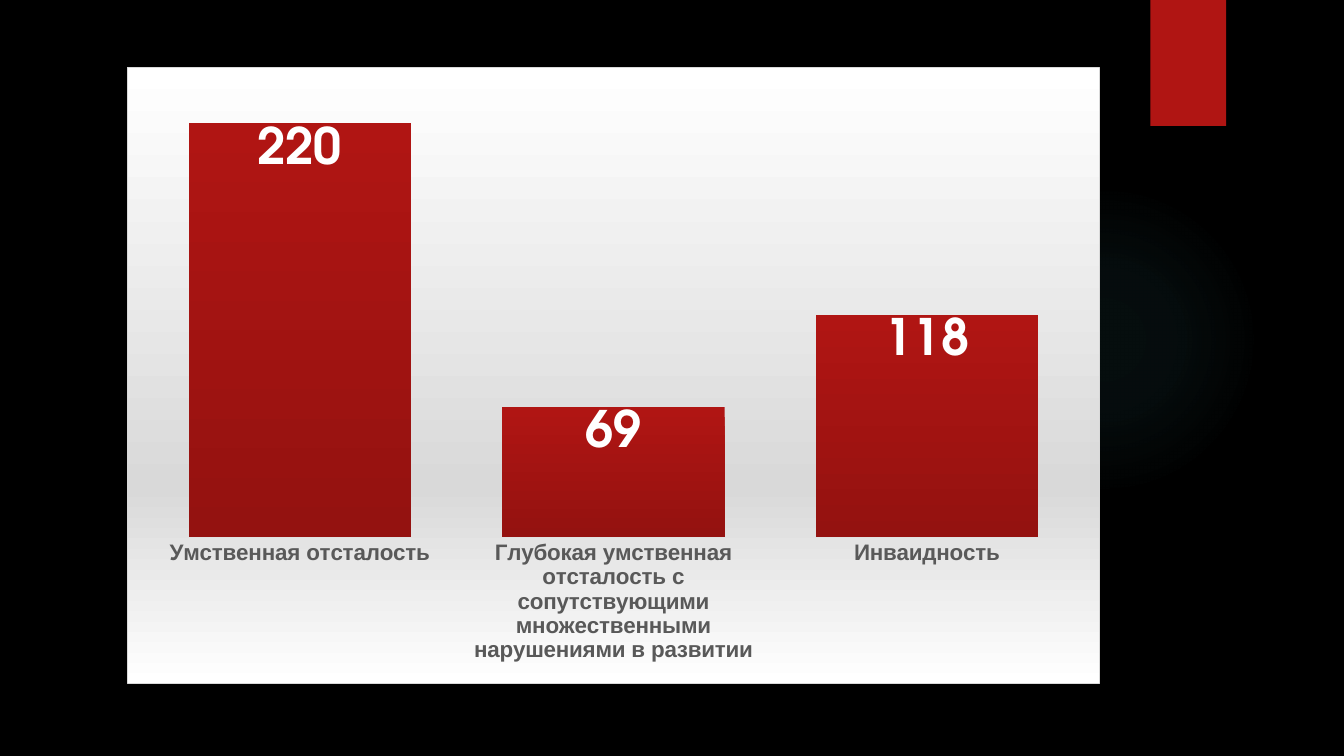
from pptx import Presentation
from pptx.chart.data import CategoryChartData
from pptx.dml.color import RGBColor
from pptx.enum.chart import XL_CHART_TYPE, XL_LABEL_POSITION, XL_TICK_MARK
from pptx.enum.shapes import MSO_SHAPE
from pptx.oxml import parse_xml
from pptx.oxml.ns import nsdecls, qn
from pptx.util import Inches, Pt

COLUMNS = XL_CHART_TYPE.COLUMN_CLUSTERED
INSIDE_END = XL_LABEL_POSITION.INSIDE_END
NO_TICK = XL_TICK_MARK.NONE
ELLIPSE = MSO_SHAPE.OVAL
RECTANGLE = MSO_SHAPE.RECTANGLE

COLORS = {
    "background": "000000",
    "glow": "50B9C1",
    "red": "B01513",
    "dark_red": "941210",
    "white": "FFFFFF",
    "silver": "D9D9D9",
    "label": "595959",
}
HEADING_FONT = "TeX Gyre Adventor"
LABEL_FONT = "Arial"

DOWNWARD = '<a:lin ang="5400000" scaled="0"/>'
FROM_CENTRE = ('<a:path path="circle"><a:fillToRect l="50000" t="50000" '
               'r="50000" b="50000"/></a:path>')

DIAGNOSES = {
    "Умственная отсталость": 220,
    "Глубокая умственная отсталость с сопутствующими множественными "
    "нарушениями в развитии": 69,
    "Инваидность": 118,
}


def rgb(color):
    return RGBColor.from_string(COLORS[color])


def gradient(stops, direction):
    """Return a gradient fill; each stop is (position %, colour, opacity %)."""
    marks = "".join(
        f'<a:gs pos="{position * 1000}"><a:srgbClr val="{COLORS[color]}">'
        f'<a:alpha val="{opacity * 1000}"/></a:srgbClr></a:gs>'
        for position, color, opacity in stops)
    return parse_xml(f'<a:gradFill {nsdecls("a")} rotWithShape="1">'
                     f'<a:gsLst>{marks}</a:gsLst>{direction}</a:gradFill>')


def format_text(text, size, color="white", font=HEADING_FONT, bold=False):
    """Format any chart text that has a font."""
    text.font.size = Pt(size)
    text.font.bold = bold
    text.font.name = font
    text.font.color.rgb = rgb(color)


class DiagnosisSlide:
    def __init__(self, presentation):
        self.width = presentation.slide_width
        self.height = presentation.slide_height
        self.slide = presentation.slides.add_slide(presentation.slide_layouts[6])
        self.slide.background.fill.solid()
        self.slide.background.fill.fore_color.rgb = rgb("background")

    def place(self, left, top, width, height):
        """Turn percentages of the slide into lengths."""
        return (round(self.width * left / 100), round(self.height * top / 100),
                round(self.width * width / 100), round(self.height * height / 100))

    def shape(self, kind, color, *box):
        shape = self.slide.shapes.add_shape(kind, *self.place(*box))
        shape.shadow.inherit = False
        shape.line.fill.background()
        shape.fill.solid()
        shape.fill.fore_color.rgb = rgb(color)
        return shape.element.spPr

    def glow(self, *box):
        properties = self.shape(ELLIPSE, "glow", *box)
        stops = [(0, "glow", 7), (36, "glow", 6), (69, "glow", 0)]
        properties.replace(properties.find(qn("a:solidFill")),
                           gradient(stops, FROM_CENTRE))

    def ribbon(self, *box):
        properties = self.shape(RECTANGLE, "red", *box)
        properties.find(qn("a:effectLst")).append(parse_xml(
            f'<a:outerShdw {nsdecls("a")} blurRad="{Pt(3)}" dist="{Pt(2)}" '
            f'dir="5400000" rotWithShape="0"><a:srgbClr val="{COLORS["background"]}">'
            '<a:alpha val="45000"/></a:srgbClr></a:outerShdw>'))

    def chart(self, values, *box):
        data = CategoryChartData()
        data.categories = list(values)
        data.add_series("Series 1", list(values.values()))
        chart = self.slide.shapes.add_chart(COLUMNS, *self.place(*box), data).chart
        chart.has_title = False
        chart.has_legend = False
        format_text(chart, 10)
        self.style_axes(chart)
        self.style_columns(chart)
        self.style_area(chart)

    def style_axes(self, chart):
        names = chart.category_axis
        names.major_tick_mark = names.minor_tick_mark = NO_TICK
        names.format.line.fill.background()
        format_text(names.tick_labels, 16, color="label", font=LABEL_FONT, bold=True)
        counts = chart.value_axis
        counts.minimum_scale, counts.maximum_scale = 0, 250
        counts.has_major_gridlines = False
        counts.visible = False

    def style_columns(self, chart):
        plot = chart.plots[0]
        plot.gap_width = 41
        plot.vary_by_categories = False
        series = plot.series[0]
        series.format.fill.solid()
        solid = chart.element.find(f'.//{qn("c:ser")}/{qn("c:spPr")}/{qn("a:solidFill")}')
        solid.getparent().replace(
            solid, gradient([(0, "red", 100), (100, "dark_red", 100)], DOWNWARD))
        labels = series.data_labels
        labels.show_value = True
        labels.position = INSIDE_END
        format_text(labels, 36, bold=True)

    def style_area(self, chart):
        """Fill and outline the chart area and fix the inner plot area."""
        body = chart.element.find(qn("c:chart"))
        area = parse_xml(
            f'<c:spPr {nsdecls("c", "a")}><a:ln w="{Pt(0.75)}"><a:solidFill>'
            f'<a:srgbClr val="{COLORS["silver"]}"/></a:solidFill></a:ln></c:spPr>')
        stops = [(0, "white", 100), (68, "silver", 100), (100, "white", 100)]
        area.insert(0, gradient(stops, DOWNWARD))
        body.addnext(area)
        plot_area = body.find(qn("c:plotArea"))
        for layout in plot_area.findall(qn("c:layout")):
            plot_area.remove(layout)
        shares = {"x": 0.016, "y": 0, "w": 0.968, "h": 0.762}
        modes = '<c:xMode val="edge"/><c:yMode val="edge"/>'
        sides = "".join(f'<c:{side} val="{share}"/>' for side, share in shares.items())
        plot_area.insert(0, parse_xml(
            f'<c:layout {nsdecls("c")}><c:manualLayout><c:layoutTarget val="inner"/>'
            f'{modes}{sides}</c:manualLayout></c:layout>'))


def main():
    presentation = Presentation()
    presentation.slide_width = Inches(13.33)
    presentation.slide_height = Inches(7.5)
    slide = DiagnosisSlide(presentation)
    slide.glow(70.59, 24.4, 23.11, 41.07)
    slide.ribbon(85.6, 0, 5.63, 16.67)
    slide.chart(DIAGNOSES, 9.45, 8.8, 72.39, 81.73)
    presentation.save("out.pptx")


if __name__ == "__main__":
    main()
